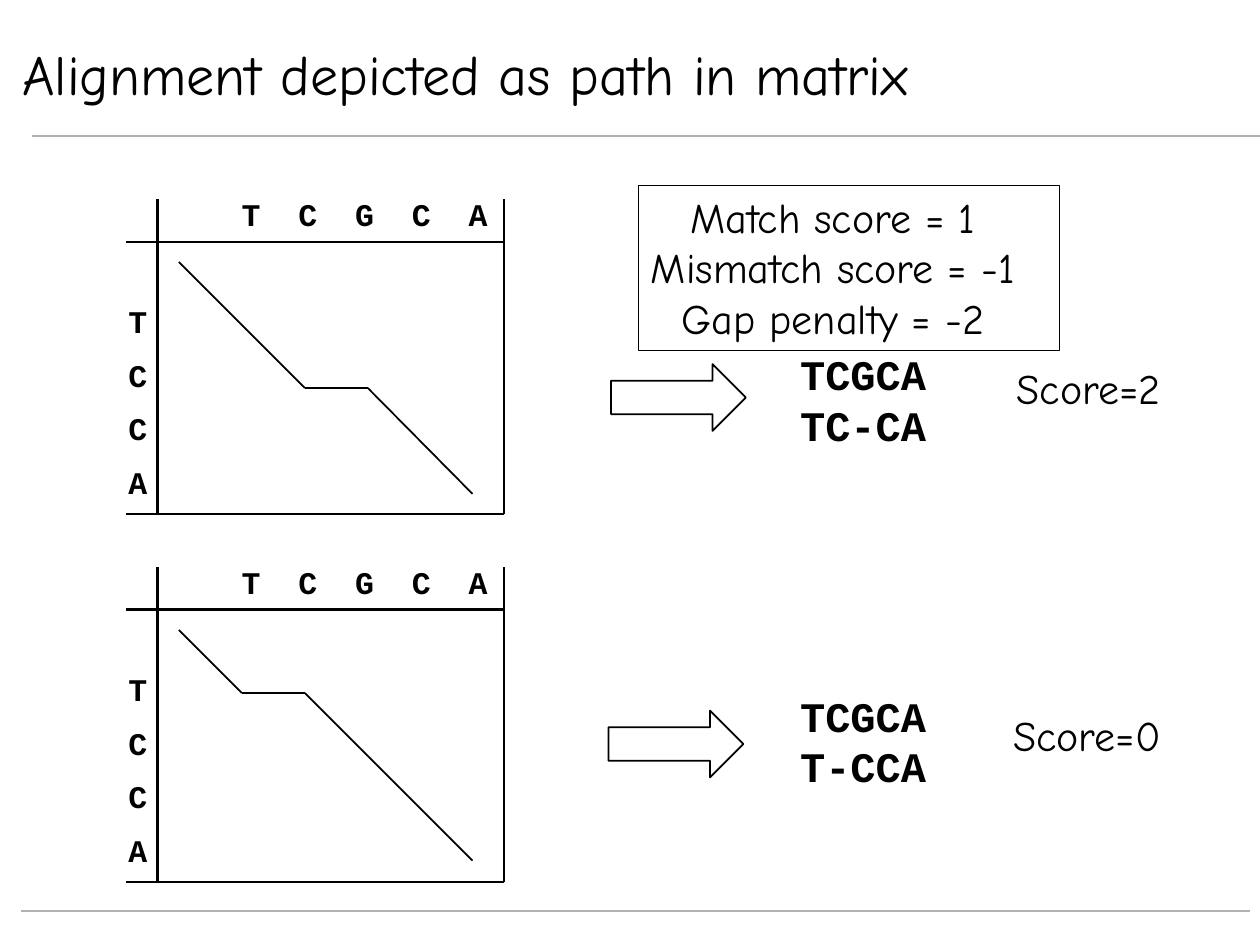
from itertools import pairwise

from lxml.etree import SubElement
from pptx import Presentation
from pptx.dml.color import RGBColor
from pptx.enum.shapes import MSO_CONNECTOR as Connector, MSO_SHAPE as Shape
from pptx.enum.text import MSO_ANCHOR as Anchor, PP_ALIGN as Align
from pptx.oxml.ns import qn
from pptx.util import Inches, Pt

BLACK = RGBColor(0x00, 0x00, 0x00)
WHITE = RGBColor(0xFF, 0xFF, 0xFF)
GRAY = RGBColor(0xB2, 0xB2, 0xB2)
HAND_FONT = "Comic Neue"
CODE_FONT = "Courier New"

LETTER_PITCH = 0.45
FIRST_LETTER = 0.9
ROW_GAP = 9
FIRST_ROW_GAP = 39.5


def add_line(slide, start, end, color=BLACK, width=1.5):
    line = slide.shapes.add_connector(
        Connector.STRAIGHT, *(Inches(value) for value in (*start, *end)))
    line.line.color.rgb = color
    line.line.width = Pt(width)
    SubElement(line._element.spPr, qn("a:effectLst"))
    return line


def add_text(slide, lines, left, top, width, height, font=HAND_FONT, size=24,
             bold=False, align=Align.CENTER, anchor=Anchor.TOP, wrap=True):
    box = slide.shapes.add_textbox(
        Inches(left), Inches(top), Inches(width), Inches(height))
    frame = box.text_frame
    frame.word_wrap = wrap
    frame.vertical_anchor = anchor
    for index, text in enumerate(lines):
        paragraph = frame.add_paragraph() if index else frame.paragraphs[0]
        paragraph.alignment = align
        run = paragraph.add_run()
        run.text = text
        run.font.name = font
        run.font.size = Pt(size)
        run.font.bold = bold
        run.font.color.rgb = BLACK
    return box


def add_tab_stops(paragraph, positions):
    tab_list = SubElement(paragraph._p.get_or_add_pPr(), qn("a:tabLst"))
    for position in positions:
        SubElement(tab_list, qn("a:tab"), pos=str(Inches(position)), algn="l")


def add_matrix(slide, top, columns, rows, path):
    labels = ["".join(f"\t{letter}" for letter in columns), *rows]
    box = add_text(slide, labels, 0.92, top, 3.25, 2.66, font=CODE_FONT,
                   size=18, bold=True, align=Align.LEFT)
    header, *row_labels = box.text_frame.paragraphs
    add_tab_stops(header, [FIRST_LETTER + LETTER_PITCH * index
                           for index in range(len(columns))])
    for index, paragraph in enumerate(row_labels):
        paragraph.space_before = Pt(ROW_GAP if index else FIRST_ROW_GAP)

    frame_top, frame_bottom = top + 0.08, top + 2.58
    for y in (top + 0.42, frame_bottom):
        add_line(slide, (1, y), (4, y))
    for x in (1.25, 4):
        add_line(slide, (x, frame_top), (x, frame_bottom))
    for start, end in pairwise(path):
        add_line(slide, start, end, width=1)


def add_arrow(slide, left, top):
    arrow = slide.shapes.add_shape(
        Shape.RIGHT_ARROW, Inches(left), Inches(top), Inches(1.07), Inches(0.53))
    arrow.shadow.inherit = False
    arrow.fill.solid()
    arrow.fill.fore_color.rgb = WHITE
    arrow.line.color.rgb = BLACK
    arrow.line.width = Pt(1)


def add_score_rules(slide):
    box = add_text(
        slide, ["Match score = 1", "Mismatch score = -1", "Gap penalty = -2"],
        5.07, 1.47, 3.34, 1.31)
    box.text_frame.margin_left = Inches(0)
    box.text_frame.margin_right = Inches(0.26)
    box.line.color.rgb = BLACK
    box.line.width = Pt(0.75)


def main():
    presentation = Presentation()
    presentation.slide_width = Inches(10)
    presentation.slide_height = Inches(7.5)
    slide = presentation.slides.add_slide(presentation.slide_layouts[6])

    add_line(slide, (0.25, 1.08), (10, 1.08), color=GRAY)
    add_line(slide, (0.17, 7.23), (9.92, 7.23), color=GRAY)
    add_text(slide, ["Alignment depicted as path in matrix"],
             0.08, 0.33, 7.83, 0.5, size=32, align=Align.LEFT,
             anchor=Anchor.MIDDLE)

    add_matrix(slide, 1.5, "TCGCA", "TCCA",
               [(1.42, 2.08), (2.42, 3.08), (2.92, 3.08), (3.75, 3.92)])
    add_matrix(slide, 4.42, "TCGCA", "TCCA",
               [(1.42, 5), (1.92, 5.5), (2.42, 5.5), (3.75, 6.83)])

    add_arrow(slide, 4.85, 2.89)
    add_arrow(slide, 4.83, 5.64)
    for top, aligned in ((2.72, "TC-CA"), (5.43, "T-CCA")):
        add_text(slide, ["TCGCA", aligned], 6.25, top, 1.2, 0.9,
                 font=CODE_FONT, bold=True, wrap=False)
    add_text(slide, ["Score=2"], 7.86, 2.83, 1.56, 0.5)
    add_text(slide, ["Score=0"], 7.75, 5.58, 1.75, 0.5)
    add_score_rules(slide)

    presentation.save("out.pptx")


if __name__ == "__main__":
    main()
